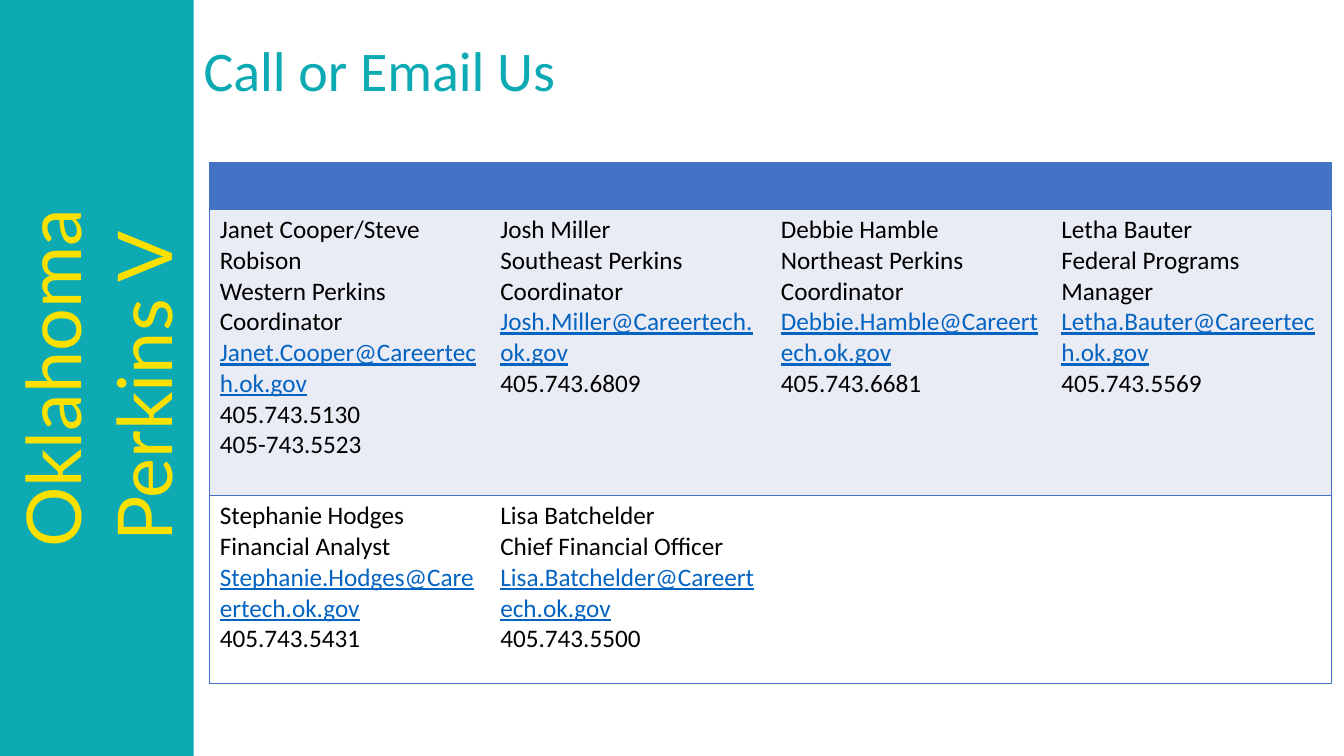
"""Build the contact slide with a vertical banner, a title and a staff table."""
from dataclasses import dataclass

from lxml.etree import SubElement
from pptx import Presentation
from pptx.dml.color import RGBColor
from pptx.enum.shapes import MSO_SHAPE
from pptx.enum.text import MSO_ANCHOR, PP_ALIGN
from pptx.oxml.ns import qn
from pptx.slide import Slide
from pptx.table import Table, _Cell
from pptx.text.text import _Paragraph
from pptx.util import Inches, Pt

TEAL, GOLD, BLUE = "0DAAB4", "FCE100", "4472C4"
PALE, WHITE, BLACK, LINK = "E9EBF5", "FFFFFF", "000000", "0563C1"
COLS = 4


@dataclass
class Staff:
    name: str
    role: str
    mail: str
    phones: tuple[str, ...]


@dataclass
class Band:
    height: float
    fill: str
    staff: tuple[Staff, ...] = ()


BANDS = (
    Band(0.47, BLUE),
    Band(2.84, PALE, (
        Staff("Janet Cooper/Steve Robison", "Western Perkins Coordinator",
              "Janet.Cooper", ("405.743.5130", "405-743.5523")),
        Staff("Josh Miller", "Southeast Perkins Coordinator",
              "Josh.Miller", ("405.743.6809",)),
        Staff("Debbie Hamble", "Northeast Perkins Coordinator",
              "Debbie.Hamble", ("405.743.6681",)),
        Staff("Letha Bauter", "Federal Programs Manager",
              "Letha.Bauter", ("405.743.5569",)),
    )),
    Band(1.86, WHITE, (
        Staff("Stephanie Hodges", "Financial Analyst",
              "Stephanie.Hodges", ("405.743.5431",)),
        Staff("Lisa Batchelder", "Chief Financial Officer",
              "Lisa.Batchelder", ("405.743.5500",)),
    )),
)


def color(code: str) -> RGBColor:
    return RGBColor.from_string(code)


def style(para: _Paragraph, size: float, code: str, face: str = "Calibri") -> None:
    para.font.size = Pt(size)
    para.font.name = face
    para.font.color.rgb = color(code)


def draw_banner(slide: Slide) -> None:
    shape = slide.shapes.add_shape(
        MSO_SHAPE.RECTANGLE, Inches(-2.79), Inches(2.79), Inches(7.5), Inches(1.92))
    shape.rotation = 270
    shape.shadow.inherit = False
    shape.fill.solid()
    shape.fill.fore_color.rgb = color(TEAL)
    shape.line.fill.background()
    frame = shape.text_frame
    frame.text = "Oklahoma\nPerkins V "
    for para in frame.paragraphs:
        para.alignment = PP_ALIGN.CENTER
        style(para, 54, GOLD, "Lato")


def draw_title(slide: Slide) -> None:
    box = slide.shapes.add_textbox(Inches(1.92), 0, Inches(11.41), Inches(1.45))
    frame = box.text_frame
    frame.word_wrap = True
    frame.vertical_anchor = MSO_ANCHOR.MIDDLE
    frame.text = "Call or Email Us"
    para = frame.paragraphs[0]
    para.line_spacing = 0.9
    style(para, 40, TEAL)


def paint_cell(cell: _Cell, col: int, fill: str) -> None:
    props = cell._tc.get_or_add_tcPr()
    sides = {"lnL": col == 0, "lnR": col == COLS - 1, "lnT": True, "lnB": True}
    for side, shown in sides.items():
        line = SubElement(props, qn(f"a:{side}"), w=str(Pt(1)))
        if shown:
            solid = SubElement(line, qn("a:solidFill"))
            SubElement(solid, qn("a:srgbClr"), val=BLUE)
        else:
            SubElement(line, qn("a:noFill"))
    cell.fill.solid()
    cell.fill.fore_color.rgb = color(fill)


def write_staff(cell: _Cell, staff: Staff) -> None:
    mail = f"{staff.mail}@Careertech.ok.gov"
    lines = (staff.name, staff.role, mail, *staff.phones)
    cell.text = "\n".join(lines)
    for line, para in zip(lines, cell.text_frame.paragraphs):
        style(para, 18, LINK if line == mail else BLACK)
        para.font.underline = line == mail


def draw_table(slide: Slide) -> None:
    frame = slide.shapes.add_table(
        len(BANDS), COLS, Inches(2.08), Inches(1.61), Inches(11.13),
        Inches(sum(band.height for band in BANDS)))
    table: Table = frame.table
    table.first_row = table.horz_banding = False
    for row, band in enumerate(BANDS):
        table.rows[row].height = Inches(band.height)
        for col in range(COLS):
            paint_cell(table.cell(row, col), col, band.fill)
        for col, staff in enumerate(band.staff):
            write_staff(table.cell(row, col), staff)
    table.cell(0, 0).merge(table.cell(0, COLS - 1))


def main() -> None:
    deck = Presentation()
    deck.slide_width, deck.slide_height = Inches(13.33), Inches(7.5)
    slide = deck.slides.add_slide(deck.slide_layouts[6])
    draw_banner(slide)
    draw_title(slide)
    draw_table(slide)
    deck.save("out.pptx")


if __name__ == "__main__":
    main()
